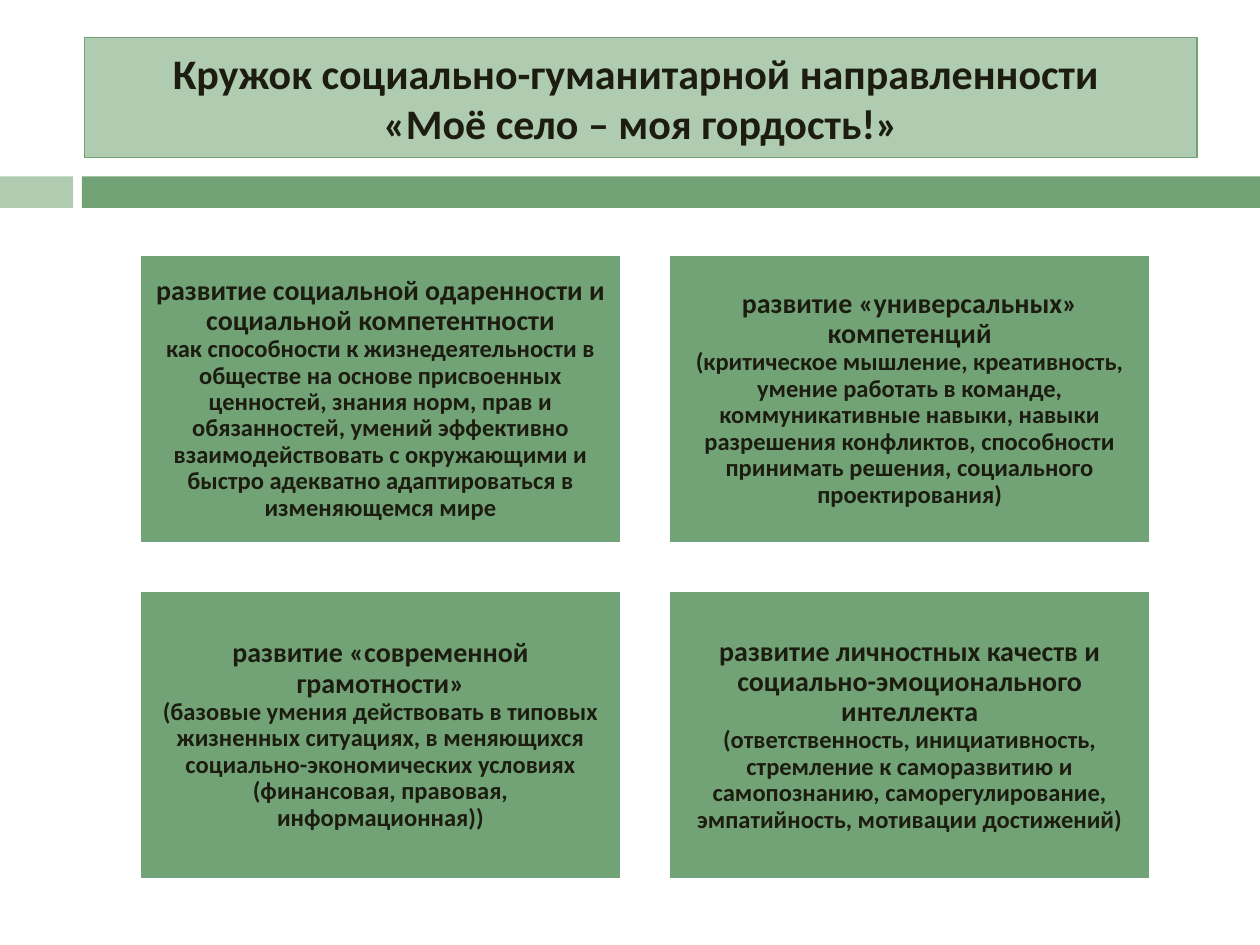
from dataclasses import dataclass

from pptx import Presentation
from pptx.dml.color import RGBColor
from pptx.enum.shapes import MSO_SHAPE
from pptx.enum.text import MSO_ANCHOR, MSO_AUTO_SIZE, PP_ALIGN
from pptx.util import Inches, Pt

RECTANGLE = MSO_SHAPE.RECTANGLE
MIDDLE = MSO_ANCHOR.MIDDLE
NO_AUTOFIT = MSO_AUTO_SIZE.NONE
CENTER = PP_ALIGN.CENTER

TITLE_LINES = (
    "Кружок социально-гуманитарной направленности ",
    "«Моё село – моя гордость!»",
)
GOALS = (
    (
        "развитие социальной одаренности и социальной компетентности",
        "как способности к жизнедеятельности в обществе на основе присвоенных "
        "ценностей, знания норм, прав и обязанностей, умений эффективно "
        "взаимодействовать с окружающими и быстро адекватно адаптироваться "
        "в изменяющемся мире",
    ),
    (
        "развитие «универсальных» компетенций",
        "(критическое мышление, креативность, умение работать в команде, "
        "коммуникативные навыки, навыки разрешения конфликтов, способности "
        "принимать решения, социального проектирования)",
    ),
    (
        "развитие «современной грамотности»",
        "(базовые умения действовать в типовых жизненных ситуациях, "
        "в меняющихся социально-экономических условиях "
        "(финансовая, правовая, информационная))",
    ),
    (
        "развитие личностных качеств и социально-эмоционального интеллекта",
        "(ответственность, инициативность, стремление к саморазвитию и "
        "самопознанию, саморегулирование, эмпатийность, мотивации достижений)",
    ),
)


@dataclass(frozen=True)
class Theme:
    font: str = "Calibri"
    text: RGBColor = RGBColor(0x1C, 0x1C, 0x11)
    green: RGBColor = RGBColor(0x72, 0xA3, 0x76)
    pale_green: RGBColor = RGBColor(0xB0, 0xCC, 0xB0)
    white: RGBColor = RGBColor(0xFF, 0xFF, 0xFF)
    title_size: int = 24
    heading_size: int = 16
    detail_size: int = 14


class SlideBuilder:
    def __init__(self, slide, theme):
        self.slide = slide
        self.theme = theme

    def format_paragraph(self, paragraph, size):
        paragraph.alignment = CENTER
        font = paragraph.font
        font.name = self.theme.font
        font.size = Pt(size)
        font.bold = True
        font.color.rgb = self.theme.text

    def paint(self, shape, fill, line=None, line_width=0):
        shape.fill.solid()
        shape.fill.fore_color.rgb = fill
        if line is None:
            shape.line.fill.background()
        else:
            shape.line.color.rgb = line
            shape.line.width = Pt(line_width)

    def title(self, lines, left, top, width, height):
        title = self.slide.shapes.title
        title.left, title.top = Inches(left), Inches(top)
        title.width, title.height = Inches(width), Inches(height)
        self.paint(title, self.theme.pale_green, self.theme.green, 0.75)
        frame = title.text_frame
        frame.auto_size = NO_AUTOFIT
        frame.vertical_anchor = MIDDLE
        paragraph = frame.paragraphs[0]
        for index, line in enumerate(lines):
            if index:
                paragraph.add_line_break()
            paragraph.add_run().text = line
        self.format_paragraph(paragraph, self.theme.title_size)

    def rectangle(self, left, top, width, height, fill, line=None, line_width=0):
        shape = self.slide.shapes.add_shape(
            RECTANGLE, Inches(left), Inches(top), Inches(width), Inches(height)
        )
        shape.shadow.inherit = False
        self.paint(shape, fill, line, line_width)
        return shape

    def card(self, heading, detail, left, top, width, height):
        shape = self.rectangle(
            left, top, width, height, self.theme.green, self.theme.white, 1.5
        )
        frame = shape.text_frame
        frame.word_wrap = True
        frame.vertical_anchor = MIDDLE
        frame.margin_left = frame.margin_right = Inches(0.07)
        frame.margin_top = frame.margin_bottom = Inches(0.07)
        blocks = (
            (frame.paragraphs[0], heading, self.theme.heading_size),
            (frame.add_paragraph(), detail, self.theme.detail_size),
        )
        for paragraph, text, size in blocks:
            paragraph.text = text
            paragraph.line_spacing = 0.9
            self.format_paragraph(paragraph, size)


def main():
    presentation = Presentation()
    presentation.slide_width = Inches(10)
    presentation.slide_height = Inches(7.5)
    theme = Theme()
    slide = presentation.slides.add_slide(presentation.slide_layouts[5])
    builder = SlideBuilder(slide, theme)

    builder.rectangle(0, 1.4, 0.58, 0.25, theme.pale_green)
    builder.rectangle(0.65, 1.4, 9.35, 0.25, theme.green)
    builder.title(TITLE_LINES, 0.67, 0.3, 8.83, 0.95)

    card_width, card_height, gap = 3.82, 2.29, 0.38
    for index, (heading, detail) in enumerate(GOALS):
        row, column = divmod(index, 2)
        left = 1.11 + column * (card_width + gap)
        top = 2.02 + row * (card_height + gap)
        builder.card(heading, detail, left, top, card_width, card_height)

    presentation.save("out.pptx")


if __name__ == "__main__":
    main()
